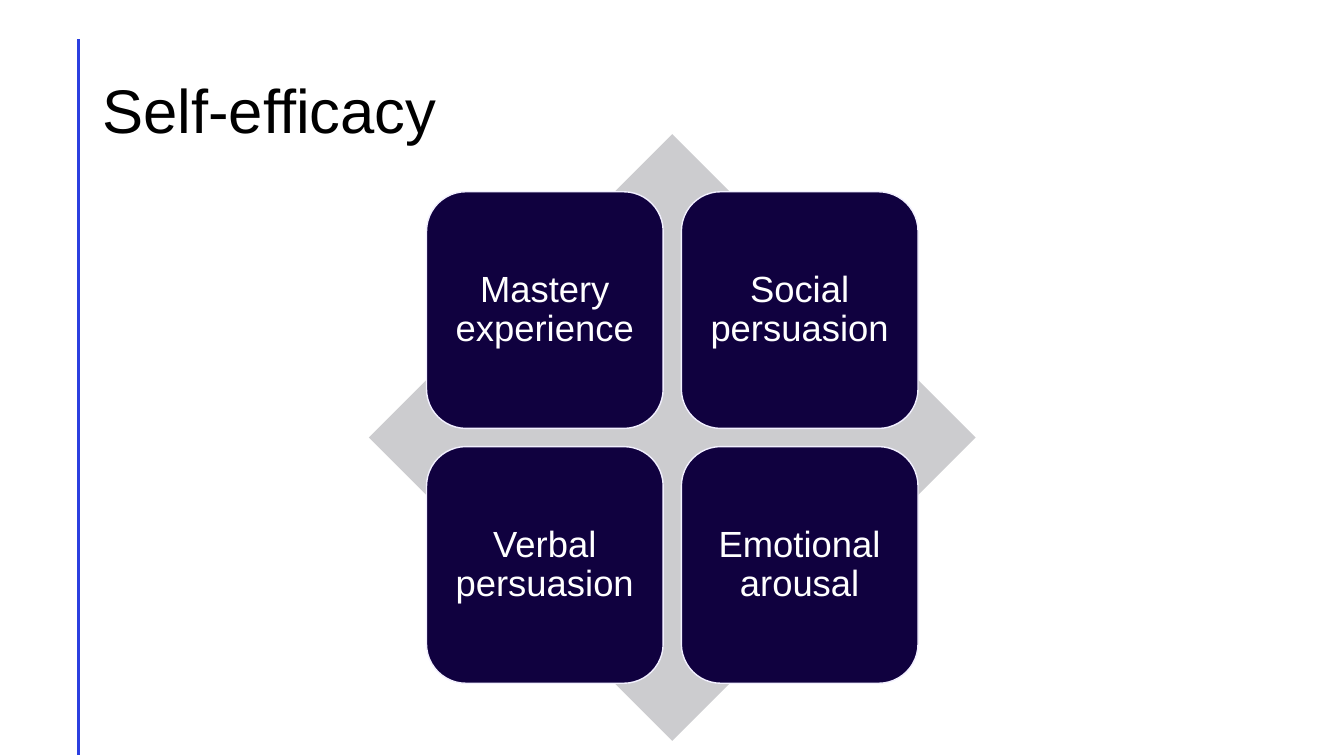
from pptx import Presentation
from pptx.dml.color import RGBColor
from pptx.enum.shapes import MSO_CONNECTOR, MSO_SHAPE
from pptx.enum.text import MSO_ANCHOR, PP_ALIGN
from pptx.oxml.ns import qn
from pptx.util import Pt
from lxml.etree import SubElement

COLORS = {
    "background": "FFFFFF",
    "rule": "2B3FE0",
    "title": "000000",
    "diamond": "CCCCCF",
    "tile": "10013F",
    "tile_line": "F2F0FF",
    "tile_text": "FFFFFF",
}
FONT = "Arial"
SOURCES = ["Mastery experience", "Social persuasion", "Verbal persuasion", "Emotional arousal"]


def color(name):
    return RGBColor.from_string(COLORS[name])


def write_text(shape, text, size, color_name, alignment, margin):
    text_frame = shape.text_frame
    text_frame.text = text
    text_frame.word_wrap = True
    text_frame.vertical_anchor = MSO_ANCHOR.MIDDLE
    text_frame.margin_left = text_frame.margin_right = Pt(margin)
    text_frame.margin_top = text_frame.margin_bottom = Pt(margin)
    paragraph = text_frame.paragraphs[0]
    paragraph.alignment = alignment
    paragraph.line_spacing = 0.9
    font = paragraph.runs[0].font
    font.name = FONT
    font.size = Pt(size)
    font.color.rgb = color(color_name)


def add_filled_shape(slide, kind, left, top, size, fill_name):
    shape = slide.shapes.add_shape(kind, Pt(left), Pt(top), Pt(size), Pt(size))
    shape.shadow.inherit = False
    shape.fill.solid()
    shape.fill.fore_color.rgb = color(fill_name)
    return shape


def add_side_rule(slide, left, top, height):
    rule = slide.shapes.add_connector(
        MSO_CONNECTOR.STRAIGHT, Pt(left), Pt(top), Pt(left), Pt(top + height)
    )
    rule.line.color.rgb = color("rule")
    rule.line.width = Pt(2)
    SubElement(rule._element.spPr, qn("a:effectLst"))


def add_title(slide, left, top, width, height):
    title = slide.shapes.add_textbox(Pt(left), Pt(top), Pt(width), Pt(height))
    write_text(title, "Self-efficacy", 44, "title", PP_ALIGN.LEFT, 7.2)


def add_diamond_matrix(slide, left, top, size, labels):
    diamond = add_filled_shape(slide, MSO_SHAPE.DIAMOND, left, top, size, "diamond")
    diamond.line.fill.background()
    tile_size = size * 0.39
    pitch = size * 0.42
    inset = (size - pitch - tile_size) / 2
    for index, label in enumerate(labels):
        row, column = divmod(index, 2)
        tile = add_filled_shape(
            slide,
            MSO_SHAPE.ROUNDED_RECTANGLE,
            left + inset + column * pitch,
            top + inset + row * pitch,
            tile_size,
            "tile",
        )
        tile.line.color.rgb = color("tile_line")
        tile.line.width = Pt(1)
        write_text(tile, label, 26, "tile_text", PP_ALIGN.CENTER, 8.2)


def main():
    presentation = Presentation()
    presentation.slide_width = Pt(960)
    presentation.slide_height = Pt(540)
    slide = presentation.slides.add_slide(presentation.slide_layouts[6])
    slide.background.fill.solid()
    slide.background.fill.fore_color.rgb = color("background")
    add_side_rule(slide, 56, 28, 511.5)
    add_title(slide, 66, 28.75, 828, 104.4)
    add_diamond_matrix(slide, 263.5, 95.8, 433.4, SOURCES)
    presentation.save("out.pptx")


if __name__ == "__main__":
    main()
